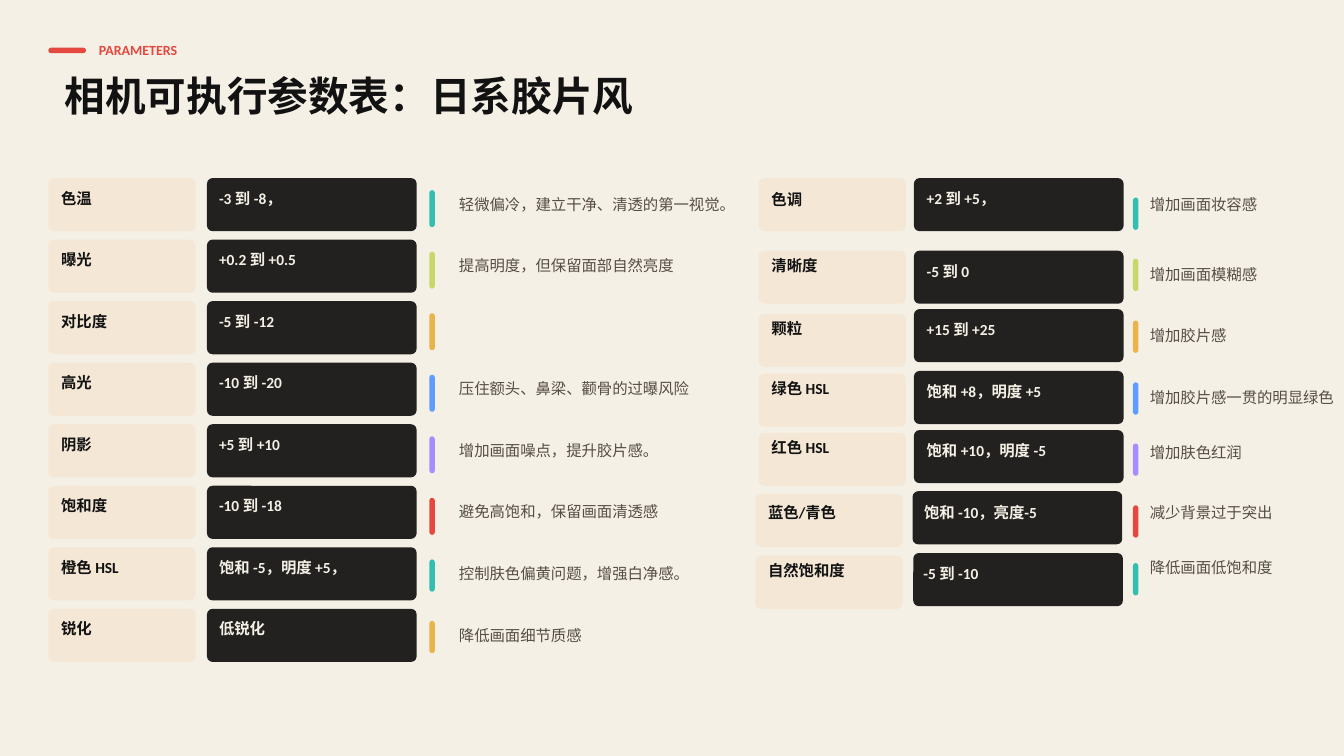
from pptx import Presentation
from pptx.dml.color import RGBColor
from pptx.enum.shapes import MSO_SHAPE as SHAPE
from pptx.enum.text import MSO_ANCHOR as ANCHOR, MSO_AUTO_SIZE as AUTO, PP_ALIGN as ALIGN
from pptx.util import Inches, Pt

COLORS = dict(paper="F5F0E6", card="F4E7D6", dark="22211F", ink="121212", muted="564D44",
              red="E5483E", teal="33BFB0", lime="C6D86A", amber="E9B44C", blue="5E9DFF",
              violet="A88CFF")
BAR_CYCLE = ["teal", "lime", "amber", "blue", "violet", "red"]
FORMATS = {
    "tag": dict(size=15, bold=True, color="red"),
    "title": dict(size=43.5, bold=True, color="ink"),
    "label": dict(size=16.5, bold=True, color="ink"),
    "value": dict(size=16.5, bold=True, color="paper"),
    "note": dict(size=16.5, bold=False, color="muted"),
}
TOP, PITCH = 2.65, 6.41 / 7
LABEL_W, VALUE_W, CARD_H, TEXT_H, BAR_W = 2.19, 3.12, 0.79, 0.29, 0.08

LEFT_ROWS = [
    ("色温", "-3 到 -8，", "轻微偏冷，建立干净、清透的第一视觉。"),
    ("曝光", "+0.2 到 +0.5", "提高明度，但保留面部自然亮度"),
    ("对比度", "-5 到 -12", ""),
    ("高光", "-10 到 -20", "压住额头、鼻梁、颧骨的过曝风险"),
    ("阴影", "+5 到 +10", "增加画面噪点，提升胶片感。"),
    ("饱和度", "-10 到 -18", "避免高饱和，保留画面清透感"),
    ("橙色 HSL", "饱和 -5，明度 +5，", "控制肤色偏黄问题，增强白净感。"),
    ("锐化", "低锐化", "降低画面细节质感"),
]
# Texts, then label card (left, top, text inset), value card (left, top, text inset),
# bar top and note top
RIGHT_ROWS = [
    ("色调", "+2 到 +5，", "增加画面妆容感",
     (11.29, 2.65, 0.18), (13.6, 2.65, 0.19), 2.94, 2.9),
    ("清晰度", "-5 到 0", "增加画面模糊感",
     (11.29, 3.73, 0.08), (13.6, 3.73, 0.19), 3.85, 3.94),
    ("颗粒", "+15 到 +25", "增加胶片感",
     (11.29, 4.67, 0.08), (13.6, 4.6, 0.19), 4.77, 4.85),
    ("绿色 HSL", "饱和 +8，明度 +5", "增加胶片感一贯的明显绿色",
     (11.29, 5.56, 0.08), (13.6, 5.52, 0.19), 5.69, 5.77),
    ("红色 HSL", "饱和 +10，明度 -5", "增加肤色红润",
     (11.29, 6.44, 0.08), (13.6, 6.4, 0.19), 6.6, 6.6),
    ("蓝色/青色", "饱和 -10，亮度-5", "减少背景过于突出",
     (11.24, 7.35, 0.13), (13.58, 7.31, 0.17), 7.52, 7.48),
    ("自然饱和度", "-5 到 -10", "降低画面低饱和度",
     (11.24, 8.27, 0.08), (13.59, 8.23, 0.15), 8.38, 8.31),
]


def rgb(name):
    return RGBColor.from_string(COLORS[name])


def write(sp, text, style):
    tf = sp.text_frame
    settings = dict(word_wrap=True, auto_size=AUTO.NONE, vertical_anchor=ANCHOR.TOP,
                    margin_left=0, margin_top=0, margin_right=0, margin_bottom=0)
    for name, value in settings.items():
        setattr(tf, name, value)
    p = tf.paragraphs[0]
    p.alignment = ALIGN.LEFT
    r = p.add_run()
    r.text = text
    fmt = FORMATS[style]
    for name, value in dict(name="Calibri", size=Pt(fmt["size"]), bold=fmt["bold"]).items():
        setattr(r.font, name, value)
    r.font.color.rgb = rgb(fmt["color"])


def add_text(s, box, text, style):
    write(s.shapes.add_textbox(*map(Inches, box)), text, style)


def add_rounded(s, box, color, radius=0.5):
    sp = s.shapes.add_shape(SHAPE.ROUNDED_RECTANGLE, *map(Inches, box))
    sp.adjustments[0] = radius
    sp.shadow.inherit = False
    sp.fill.solid()
    sp.fill.fore_color.rgb = rgb(color)
    sp.line.fill.background()


def add_card(s, box, color, text, style, inset_x, inset_y):
    x, y, w, h = box
    add_rounded(s, box, color, 0.105)
    add_text(s, (x + inset_x, y + inset_y, w - 2 * inset_x, TEXT_H), text, style)


def add_header(s, x, y):
    add_rounded(s, (x, y + 0.09, 0.56, 0.08), "red")
    add_text(s, (x + 0.75, y, 4.38, 0.25), "PARAMETERS", "tag")
    title = s.shapes.title
    box = dict(left=x + 0.24, top=y + 0.44, width=18.08, height=0.73)
    for name, value in box.items():
        setattr(title, name, Inches(value))
    write(title, "相机可执行参数表：日系胶片风", "title")


def add_left_column(s, x, y):
    for i, (label, value, note) in enumerate(LEFT_ROWS):
        top = y + i * PITCH
        add_card(s, (x, top, LABEL_W, CARD_H), "card", label, "label", 0.19, 0.16)
        add_card(s, (x + 2.36, top, VALUE_W, CARD_H), "dark", value, "value", 0.18, 0.16)
        bar_h = 0.55 if i < 6 else 0.48
        color = "amber" if label == "锐化" else BAR_CYCLE[i % 6]
        add_rounded(s, (x + 5.67, top + 0.18, BAR_W, bar_h), color)
        if note:
            add_text(s, (x + 6.11, top + 0.25, 4.3, TEXT_H), note, "note")


def add_right_column(s, bar_x, note_x):
    for i, (label, value, note, label_at, value_at, bar_y, note_y) in enumerate(RIGHT_ROWS):
        x, y, inset = label_at
        add_card(s, (x, y, LABEL_W, CARD_H), "card", label, "label", 0.19, inset)
        x, y, inset = value_at
        add_card(s, (x, y, VALUE_W, CARD_H), "dark", value, "value", inset, 0.17)
        add_rounded(s, (bar_x, bar_y, BAR_W, 0.48), BAR_CYCLE[i % 6])
        add_text(s, (note_x, note_y, 20 - note_x, TEXT_H), note, "note")


def main():
    prs = Presentation()
    prs.slide_width, prs.slide_height = Inches(20), Inches(11.25)
    s = prs.slides.add_slide(prs.slide_layouts[5])
    s.background.fill.solid()
    s.background.fill.fore_color.rgb = rgb("paper")
    add_header(s, 0.72, 0.62)
    add_left_column(s, 0.72, TOP)
    add_right_column(s, 16.86, 17.11)
    prs.save("out.pptx")


if __name__ == "__main__":
    main()
